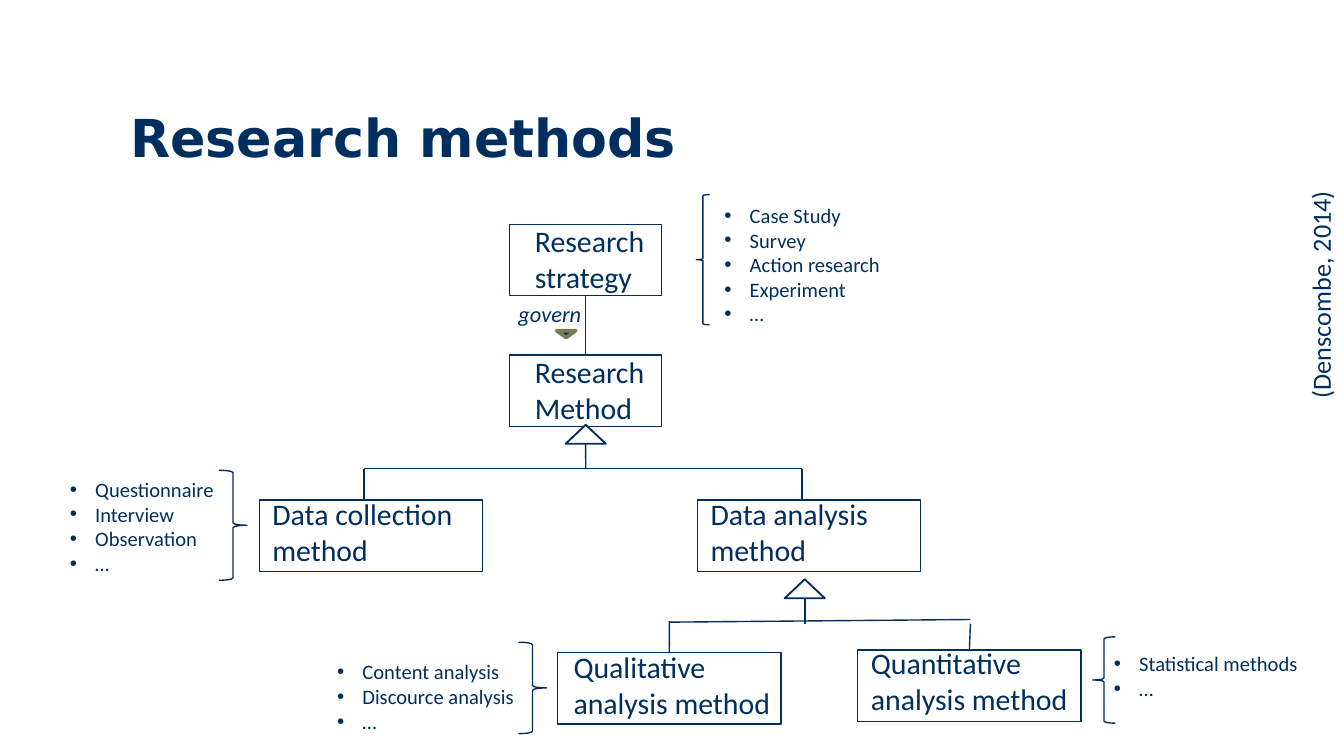
from dataclasses import dataclass

from lxml.etree import SubElement
from pptx import Presentation
from pptx.dml.color import RGBColor
from pptx.enum.shapes import MSO_CONNECTOR, MSO_SHAPE
from pptx.enum.text import MSO_ANCHOR, MSO_AUTO_SIZE, PP_ALIGN
from pptx.oxml.ns import qn
from pptx.util import Cm, Pt

TOP, BOTTOM = 0, 2


@dataclass(frozen=True)
class Theme:
    ink: RGBColor = RGBColor(0x00, 0x2F, 0x5F)
    stroke: RGBColor = RGBColor(0x00, 0x2E, 0x5D)
    paper: RGBColor = RGBColor(0xFF, 0xFF, 0xFF)
    accent: RGBColor = RGBColor(0x79, 0x7C, 0x4F)
    heading_font: str = "DejaVu Sans"
    body_font: str = "Calibri"
    title: int = 28
    label: int = 16
    citation: int = 14
    relation: int = 12
    example: int = 11
    bullet_indent: float = 0.48


THEME = Theme()


def write(frame, text, size, font=THEME.body_font, bold=False, italic=False,
          bullet=False, wrap=True, grow=True):
    """Fill a text frame, one paragraph per line of text."""
    frame.word_wrap = wrap
    frame.auto_size = MSO_AUTO_SIZE.SHAPE_TO_FIT_TEXT if grow else MSO_AUTO_SIZE.NONE
    for index, line in enumerate(text.split("\n")):
        paragraph = frame.paragraphs[0] if index == 0 else frame.add_paragraph()
        paragraph.alignment = PP_ALIGN.LEFT
        if bullet:
            properties = paragraph._p.get_or_add_pPr()
            indent = Cm(THEME.bullet_indent)
            properties.set("marL", str(indent))
            properties.set("indent", str(-indent))
            SubElement(properties, qn("a:buFont")).set("typeface", "Arial")
            SubElement(properties, qn("a:buChar")).set("char", "•")
        run = paragraph.add_run()
        run.text = line
        run.font.name = font
        run.font.size = Pt(size)
        run.font.bold = bold
        run.font.italic = italic
        run.font.color.rgb = THEME.ink


class Diagram:
    """Draws on one slide; all positions and sizes are in centimetres."""

    def __init__(self, slide, theme):
        self.slide = slide
        self.theme = theme

    def title(self, text, *place):
        heading = self.slide.shapes.title
        heading.left, heading.top, heading.width, heading.height = map(Cm, place)
        heading.text_frame.vertical_anchor = MSO_ANCHOR.MIDDLE
        write(heading.text_frame, text, self.theme.title,
              font=self.theme.heading_font, bold=True, grow=False)

    def text(self, text, size, *place, rotation=0, **style):
        box = self.slide.shapes.add_textbox(*map(Cm, place))
        box.rotation = rotation
        write(box.text_frame, text, size, **style)

    def shape(self, preset, *place, fill=None, line=None, weight=0.75, rotation=0):
        figure = self.slide.shapes.add_shape(preset, *map(Cm, place))
        figure.shadow.inherit = False
        figure.rotation = rotation
        if fill is None:
            figure.fill.background()
        else:
            figure.fill.solid()
            figure.fill.fore_color.rgb = fill
        figure.line.color.rgb = line or self.theme.ink
        figure.line.width = Pt(weight)
        return figure

    def concept(self, text, left, top, width, label_dx, label_dy, label_width):
        box = self.shape(MSO_SHAPE.RECTANGLE, left, top, width, 1.35,
                         fill=self.theme.paper)
        self.text(text, self.theme.label, left + label_dx, top + label_dy,
                  label_width, 1.63)
        return box

    def line(self, start, end, begin=None, finish=None):
        """Draw a line; begin and finish are (shape, side) pairs to join."""
        connector = self.slide.shapes.add_connector(
            MSO_CONNECTOR.STRAIGHT, *map(Cm, start + end))
        if begin:
            connector.begin_connect(*begin)
        if finish:
            connector.end_connect(*finish)
        connector.line.color.rgb = self.theme.stroke
        connector.line.width = Pt(0.75)
        SubElement(connector._element.spPr, qn("a:effectLst"))

    def generalization(self, apex_x, apex_y):
        self.shape(MSO_SHAPE.ISOSCELES_TRIANGLE, apex_x - 0.38, apex_y, 0.76, 0.36,
                   fill=self.theme.paper, weight=1)

    def examples(self, items, place, brace, brace_place):
        self.text("\n".join(items), self.theme.example, *place,
                  bullet=True, wrap=False)
        self.shape(brace, *brace_place, line=self.theme.stroke)


def main():
    presentation = Presentation()
    presentation.slide_width = Cm(25.4)
    presentation.slide_height = Cm(14.29)
    slide = presentation.slides.add_slide(presentation.slide_layouts[5])
    diagram = Diagram(slide, THEME)
    diagram.title("Research methods", 2.21, 1.75, 19.02, 1.65)

    strategy = diagram.concept("Research strategy", 9.63, 4.24, 2.87, 0.23, -0.15, 3.07)
    method = diagram.concept("Research Method", 9.63, 6.71, 2.87, 0.23, -0.15, 3.07)
    diagram.concept("Data collection method", 4.9, 9.45, 4.22, 0, -0.2, 3.96)
    diagram.concept("Data analysis method", 13.18, 9.45, 4.22, 0, -0.2, 3.96)
    qualitative = diagram.concept("Qualitative analysis method",
                                  10.54, 12.34, 4.22, 0.05, -0.2, 4.6)
    quantitative = diagram.concept("Quantitative analysis method",
                                   16.21, 12.29, 4.22, 0, -0.22, 4.83)

    trunk_x, collection_x, analysis_x, method_fork_y = 11.07, 6.88, 15.16, 8.86
    for branch_x in (collection_x, analysis_x):
        diagram.line((branch_x, 9.45), (branch_x, method_fork_y))
    diagram.line((collection_x, method_fork_y), (analysis_x, method_fork_y))
    diagram.line((trunk_x, method_fork_y), (trunk_x, 8.06), finish=(method, BOTTOM))
    diagram.generalization(trunk_x, 8.03)

    qualitative_x, quantitative_x, analysis_trunk_x = 12.65, 18.34, 15.21
    diagram.line((qualitative_x, 12.34), (qualitative_x, 11.74),
                 begin=(qualitative, TOP))
    diagram.line((quantitative_x, 12.29), (quantitative_x, 11.79),
                 begin=(quantitative, TOP))
    diagram.line((qualitative_x, 11.76), (quantitative_x, 11.71))
    diagram.line((analysis_trunk_x, 11.79), (analysis_trunk_x, 10.97))
    diagram.generalization(analysis_trunk_x, 10.95)

    diagram.line((trunk_x, 6.71), (trunk_x, 5.59),
                 begin=(method, TOP), finish=(strategy, BOTTOM))

    diagram.examples(["Case Study", "Survey", "Action research", "Experiment", "…"],
                     (13.44, 3.71, 3.48, 2.62),
                     MSO_SHAPE.LEFT_BRACE, (13.16, 3.68, 0.25, 2.46))
    diagram.examples(["Questionnaire", "Interview", "Observation", "…"],
                     (1.07, 8.89, 3.25, 2.13),
                     MSO_SHAPE.RIGHT_BRACE, (4.14, 8.89, 0.53, 2.08))
    diagram.examples(["Content analysis", "Discource analysis", "…"],
                     (6.12, 12.34, 3.89, 1.68),
                     MSO_SHAPE.RIGHT_BRACE, (9.8, 12.14, 0.53, 1.73))
    diagram.examples(["Statistical methods", "…"],
                     (20.8, 12.19, 4.01, 1.19),
                     MSO_SHAPE.LEFT_BRACE, (20.65, 12.04, 0.43, 1.63))

    diagram.text("govern", THEME.relation, 9.55, 5.54, 1.7, 0.76,
                 italic=True, wrap=False)
    diagram.shape(MSO_SHAPE.ISOSCELES_TRIANGLE, 10.52, 6.25, 0.36, 0.13,
                  fill=THEME.ink, line=THEME.accent, weight=2, rotation=180)
    diagram.text("(Denscombe, 2014)", THEME.citation, 22.73, 5.11, 4.47, 0.86,
                 rotation=270, wrap=False)

    presentation.save("out.pptx")


if __name__ == "__main__":
    main()
